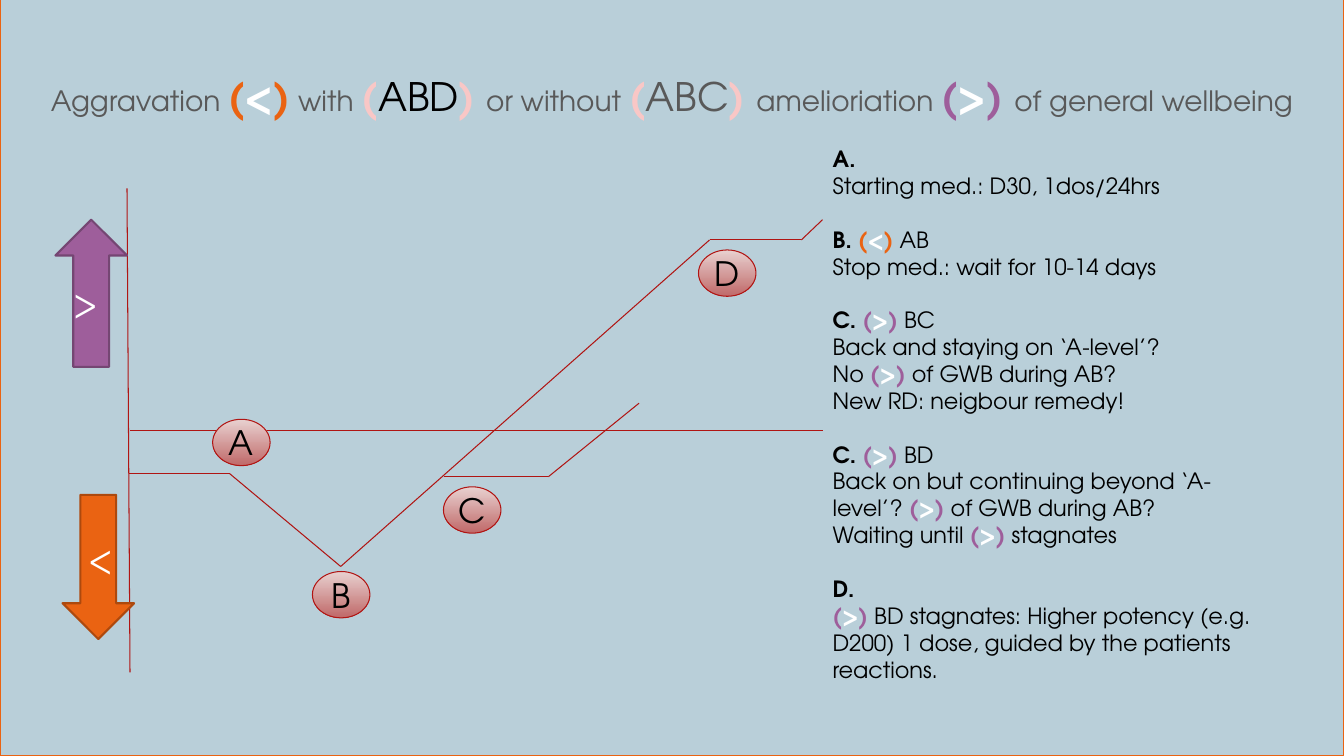
from typing import NamedTuple

from lxml.etree import SubElement
from pptx import Presentation
from pptx.dml.color import RGBColor
from pptx.enum.shapes import MSO_CONNECTOR, MSO_SHAPE
from pptx.enum.text import MSO_ANCHOR, MSO_AUTO_SIZE, PP_ALIGN
from pptx.oxml.ns import qn
from pptx.util import Emu, Inches, Pt

COLUMNS, ROWS = 160, 90
CELL = Inches(1) / 12
FONT = "TeX Gyre Adventor"
BLACK, WHITE, GREY = "000000", "FFFFFF", "595959"
BACKGROUND, RED, ORANGE, PURPLE, PINK = "B9CFD9", "B01513", "EA6312", "9E5E9B", "F9C7C6"


class Piece(NamedTuple):
    text: str
    color: str = BLACK
    bold: bool = False
    size: int = 16


class Note(NamedTuple):
    pieces: list[Piece]
    opens_group: bool = False


class Arrow(NamedTuple):
    preset: MSO_SHAPE
    box: tuple[float, float, float, float]
    sign: str
    fill: str
    outline: str
    left_inset: float
    right_inset: float


class Marker(NamedTuple):
    letter: str
    column: float
    row: float


def sign(symbol: str, color: str, size: int = 16) -> list[Piece]:
    """A white symbol between coloured brackets, all bold."""
    return [Piece("(", color, True, size), Piece(symbol, WHITE, True, size),
            Piece(") ", color, True, size)]


def path_name(letters: str, color: str) -> list[Piece]:
    return [Piece("(", PINK, True, 28), Piece(letters, color, False, 28),
            Piece(") ", PINK, True, 28)]


def heading(text: str) -> Piece:
    return Piece(text, bold=True)


BETTER = sign(">", PURPLE)
TITLE = [
    Piece("Aggravation ", GREY, size=20),
    *sign("<", ORANGE, 28)[:2], Piece(")", ORANGE, True, 28), Piece(" ", ORANGE, True, 20),
    Piece("with ", GREY, size=20), *path_name("ABD", BLACK),
    Piece("or without ", GREY, size=20), *path_name("ABC", GREY),
    Piece("amelioriation ", GREY, size=20), *sign(">", PURPLE, 28),
    Piece("of general wellbeing", GREY, size=20),
]
NOTES = [
    Note([heading("A.")]),
    Note([Piece("Starting med.: D30, 1dos/24hrs")]),
    Note([heading("B. "), *sign("<", ORANGE), Piece("AB")], True),
    Note([Piece("Stop med.: wait for 10-14 days")]),
    Note([heading("C. "), *BETTER, Piece("BC")], True),
    Note([Piece("Back and staying on ‘A-level’?")]),
    Note([Piece("No "), *BETTER, Piece("of GWB during AB?")]),
    Note([Piece("New RD: neigbour remedy!")]),
    Note([heading("C. "), *BETTER, Piece("BD")], True),
    Note([Piece("Back on but continuing beyond ‘A-level’? "), *BETTER,
          Piece("of GWB during AB?")]),
    Note([Piece("Waiting until "), *BETTER, Piece("stagnates")]),
    Note([heading("D.")], True),
    Note([*BETTER, Piece("BD stagnates: Higher potency (e.g. D200) 1 dose, "
                         "guided by the patients reactions.")]),
]
AXES_AND_CURVES = [
    [(15.12, 22.44), (15.48, 80.04)],
    [(15.48, 51.24), (97.92, 51.24)],
    [(15.36, 56.4), (27.36, 56.4), (40.56, 67.44), (84.48, 28.56), (95.4, 28.56),
     (97.92, 26.16)],
    [(52.8, 56.76), (65.28, 56.76), (76.08, 48)],
]
ARROWS = [
    Arrow(MSO_SHAPE.DOWN_ARROW, (7.44, 58.92, 8.52, 17.16), "<", ORANGE, "AD490D", 0.7, 0),
    Arrow(MSO_SHAPE.UP_ARROW, (6.6, 26.16, 8.52, 17.52), ">", PURPLE, "754673", 0, 1.2),
]
MARKERS = [Marker("A", 25.32, 49.92), Marker("B", 37.2, 68.04),
           Marker("C", 52.8, 57.96), Marker("D", 83.16, 29.76)]


def cells(count: float) -> Emu:
    return Emu(round(count * CELL))


def rgb(color: str) -> RGBColor:
    return RGBColor.from_string(color)


def place(shape, column: float, row: float, width: float, height: float) -> None:
    shape.left, shape.top = cells(column), cells(row)
    shape.width, shape.height = cells(width), cells(height)


def add_pieces(paragraph, pieces: list[Piece]) -> None:
    paragraph.font.name = FONT
    for piece in pieces:
        run = paragraph.add_run()
        run.text = piece.text
        run.font.name = FONT
        run.font.size = Pt(piece.size)
        run.font.bold = piece.bold
        run.font.color.rgb = rgb(piece.color)


def fill_title(title) -> None:
    place(title, 0, 8.04, COLUMNS, 6.84)
    frame = title.text_frame
    frame.auto_size = MSO_AUTO_SIZE.NONE
    frame.vertical_anchor = MSO_ANCHOR.TOP
    frame.paragraphs[0].alignment = PP_ALIGN.CENTER
    add_pieces(frame.paragraphs[0], TITLE)


def fill_notes(body) -> None:
    place(body, 97.92, 16.68, 55.56, 69.12)
    frame = body.text_frame
    frame.auto_size = MSO_AUTO_SIZE.NONE
    for index, note in enumerate(NOTES):
        paragraph = frame.add_paragraph() if index else frame.paragraphs[0]
        properties = paragraph._p.get_or_add_pPr()
        properties.set("marL", "0")
        properties.set("indent", "0")
        SubElement(properties, qn("a:buNone"))
        paragraph.space_before = Pt(19.2 if note.opens_group else 0)
        add_pieces(paragraph, note.pieces)


def add_shape(slide, preset: MSO_SHAPE, box: tuple[float, float, float, float],
              outline: str, line_width: float):
    shape = slide.shapes.add_shape(preset, *map(cells, box))
    shape.shadow.inherit = False
    shape.line.color.rgb = rgb(outline)
    shape.line.width = Pt(line_width)
    return shape


def add_label(shape, text: str, color: str, left: float = 0, right: float = 0) -> None:
    frame = shape.text_frame
    frame.margin_left, frame.margin_right = cells(left), cells(right)
    frame.margin_top = frame.margin_bottom = 0
    frame.vertical_anchor = MSO_ANCHOR.MIDDLE
    paragraph = frame.paragraphs[0]
    paragraph.text = text
    paragraph.alignment = PP_ALIGN.CENTER
    paragraph.font.name = FONT
    paragraph.font.size = Pt(24)
    paragraph.font.color.rgb = rgb(color)


def add_polyline(slide, points: list[tuple[float, float]]) -> None:
    for start, end in zip(points, points[1:]):
        connector = slide.shapes.add_connector(
            MSO_CONNECTOR.STRAIGHT, *map(cells, (*start, *end)))
        connector.line.color.rgb = rgb(RED)
        connector.line.width = Pt(0.75)
        SubElement(connector._element.spPr, qn("a:effectLst"))


def add_arrow(slide, arrow: Arrow) -> None:
    shape = add_shape(slide, arrow.preset, arrow.box, arrow.outline, 1.5)
    shape.fill.solid()
    shape.fill.fore_color.rgb = rgb(arrow.fill)
    add_label(shape, arrow.sign, WHITE, arrow.left_inset, arrow.right_inset)


def add_marker(slide, marker: Marker) -> None:
    box = (marker.column, marker.row, 6.84, 5.52)
    shape = add_shape(slide, MSO_SHAPE.OVAL, box, RED, 0.75)
    shape.fill.gradient()
    shape.fill.gradient_angle = 270
    for stop, color in zip(shape.fill.gradient_stops, ("E8D1D0", "C06969")):
        stop.color.rgb = rgb(color)
    add_label(shape, marker.letter, BLACK)


def main() -> None:
    presentation = Presentation()
    presentation.slide_width, presentation.slide_height = cells(COLUMNS), cells(ROWS)
    slide = presentation.slides.add_slide(presentation.slide_layouts[1])
    slide.background.fill.solid()
    slide.background.fill.fore_color.rgb = rgb(BACKGROUND)
    fill_title(slide.shapes.title)
    fill_notes(slide.placeholders[1])
    border = add_shape(slide, MSO_SHAPE.RECTANGLE, (0, 0, COLUMNS, ROWS), ORANGE, 0.75)
    border.fill.background()
    for points in AXES_AND_CURVES:
        add_polyline(slide, points)
    for arrow in ARROWS:
        add_arrow(slide, arrow)
    for marker in MARKERS:
        add_marker(slide, marker)
    presentation.save("out.pptx")


if __name__ == "__main__":
    main()
